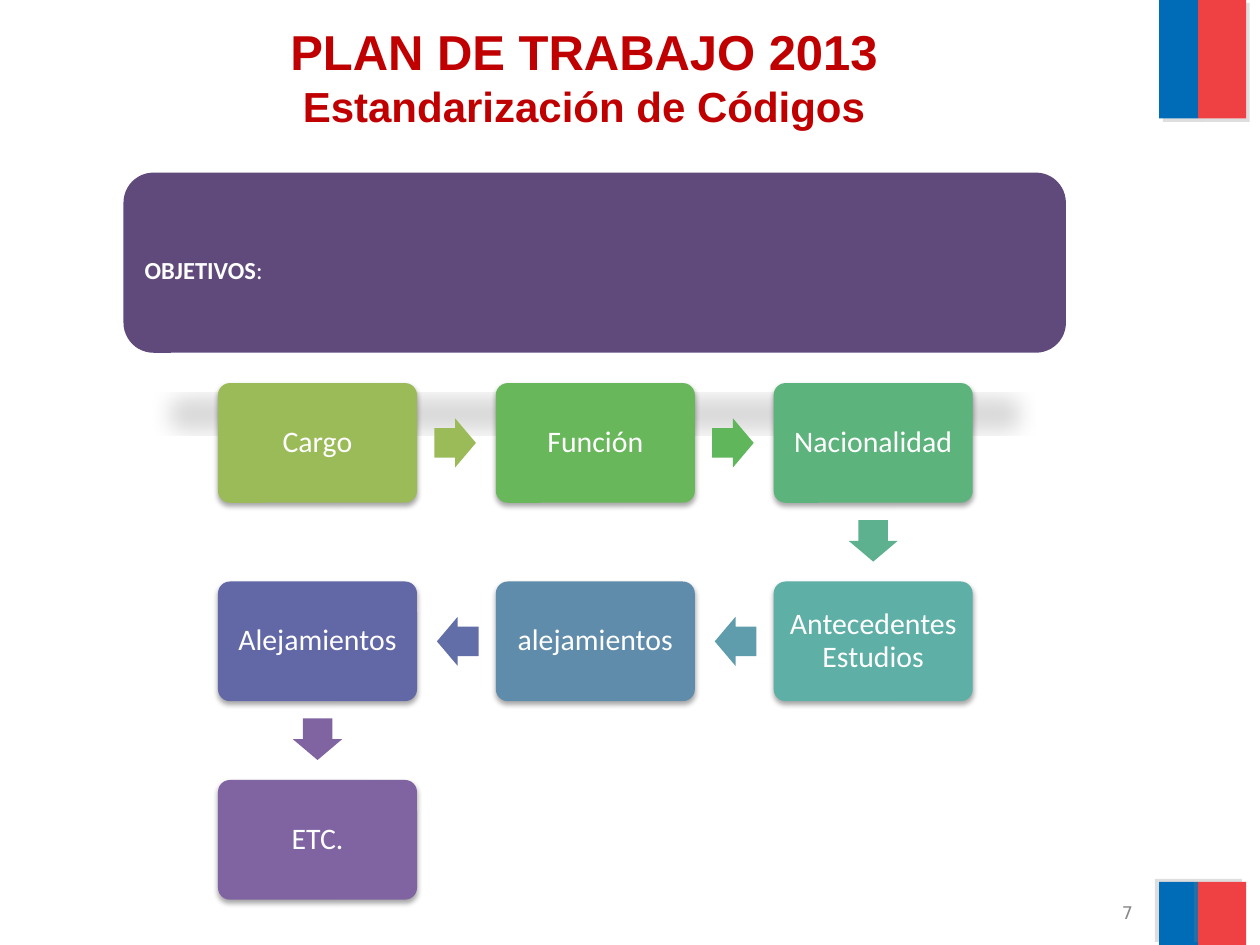
"""Build the slide on the 2013 work plan for standard codes."""
from dataclasses import dataclass

from lxml.etree import SubElement
from pptx import Presentation
from pptx.dml.color import RGBColor
from pptx.enum.shapes import MSO_SHAPE
from pptx.enum.text import MSO_ANCHOR, MSO_AUTO_SIZE, PP_ALIGN
from pptx.oxml.ns import qn
from pptx.util import Inches, Pt

COLS, ROWS = 100, 75


@dataclass(frozen=True)
class Theme:
    head: str = "Arial"
    body: str = "Calibri"
    digit: str = "DejaVu Sans"
    title: int = 28
    sub: int = 24
    step: int = 17
    label: int = 14
    small: int = 10
    crimson: str = "C00000"
    white: str = "FFFFFF"
    gray: str = "898989"
    blue: str = "006CB7"
    red: str = "EF4144"
    plum: str = "604A7B"
    shade: str = "808080"
    black: str = "000000"


def write(para, text, font, size, color, bold=False, align=None, space=None):
    run = para.add_run()
    run.text = text
    run.font.name, run.font.size, run.font.bold = font, Pt(size), bold
    run.font.color.rgb = RGBColor.from_string(color)
    if align is not None:
        para.alignment = align
    if space is not None:
        para.line_spacing = space


class Deck:
    def __init__(self, theme):
        self.theme = theme
        self.show = Presentation()
        self.show.slide_width, self.show.slide_height = Inches(10), Inches(7.5)
        self.slide = self.show.slides.add_slide(self.show.slide_layouts[5])

    def area(self, left, top, wide, high):
        across, down = self.show.slide_width / COLS, self.show.slide_height / ROWS
        return [round(n) for n in (left * across, top * down, wide * across, high * down)]

    def title(self, area, main, sub):
        look, shape = self.theme, self.slide.shapes.title
        shape.left, shape.top, shape.width, shape.height = self.area(*area)
        frame = shape.text_frame
        frame.auto_size, frame.vertical_anchor = MSO_AUTO_SIZE.NONE, MSO_ANCHOR.TOP
        para = frame.paragraphs[0]
        style = dict(font=look.head, color=look.crimson, bold=True, align=PP_ALIGN.CENTER)
        write(para, main, size=look.title, **style)
        para.add_line_break()
        write(para, sub, size=look.sub, **style)

    def shape(self, kind, area, fill, bends=(), turn=0):
        shape = self.slide.shapes.add_shape(kind, *self.area(*area))
        shape.fill.solid()
        shape.fill.fore_color.rgb = RGBColor.from_string(fill)
        shape.line.fill.background()
        shape.shadow.inherit = False
        shape.rotation = turn
        for spot, bend in enumerate(bends):
            shape.adjustments[spot] = bend
        return shape

    def shadow(self, shape, color, alpha, blur, dist, angle, **scale):
        effect = shape.element.spPr.find(qn("a:effectLst"))
        cast = SubElement(effect, qn("a:outerShdw"), blurRad=str(Pt(blur)), dist=str(Pt(dist)),
                          dir=str(angle * 60000), rotWithShape="0", **scale)
        tint = SubElement(cast, qn("a:srgbClr"), val=color)
        SubElement(tint, qn("a:alpha"), val=str(alpha * 1000))

    def flag(self, top, high, angle):
        look = self.theme
        for left, wide, fill in ((92, 3.1, look.blue), (95.1, 3.8, look.red)):
            band = self.shape(MSO_SHAPE.RECTANGLE, (left, top, wide, high), fill)
            self.shadow(band, look.shade, 25, 0, 3, angle)

    def number(self, area, text):
        look = self.theme
        frame = self.slide.shapes.add_textbox(*self.area(*area)).text_frame
        frame.word_wrap, frame.vertical_anchor = True, MSO_ANCHOR.MIDDLE
        write(frame.paragraphs[0], text, look.digit, look.small, look.gray, align=PP_ALIGN.RIGHT)

    def panel(self, area, label, tail):
        look = self.theme
        panel = self.shape(MSO_SHAPE.ROUNDED_RECTANGLE, area, look.plum)
        self.shadow(panel, look.black, 15, 12, 25, 90, sx="90000", sy="-19000")
        panel.text_frame.vertical_anchor = MSO_ANCHOR.MIDDLE
        para = panel.text_frame.paragraphs[0]
        style = dict(font=look.body, size=look.label, color=look.white)
        write(para, label, bold=True, align=PP_ALIGN.JUSTIFY, space=1.5, **style)
        write(para, tail, **style)

    def step(self, mid, size, text, fill):
        look, (x, y), (wide, high) = self.theme, mid, size
        box = self.shape(MSO_SHAPE.ROUNDED_RECTANGLE,
                         (x - wide / 2, y - high / 2, wide, high), fill, (0.1,))
        self.shadow(box, look.black, 35, 3.1, 1.8, 90)
        frame = box.text_frame
        frame.word_wrap, frame.vertical_anchor = True, MSO_ANCHOR.MIDDLE
        frame.margin_left = frame.margin_right = Inches(0.1)
        write(frame.paragraphs[0], text, look.body, look.step, look.white,
              align=PP_ALIGN.CENTER, space=0.9)

    def arrow(self, start, end, fill):
        wide, high, lean = 3.3, 3.9, 0.1
        (x, y), (to_x, to_y) = start, end
        turn = 90 if to_y > y else 0 if to_x > x else 180
        shift_x, shift_y = {0: (lean, 0), 90: (0, lean), 180: (-lean, 0)}[turn]
        left = (x + to_x) / 2 - shift_x - wide / 2
        top = (y + to_y) / 2 - shift_y - high / 2
        self.shape(MSO_SHAPE.RIGHT_ARROW, (left, top, wide, high), fill, (0.6, 0.5), turn)

    def snake(self, first, pitch, size, across, steps):
        mids = []
        for spot in range(len(steps)):
            row, col = divmod(spot, across)
            col = across - 1 - col if row % 2 else col
            mids.append((first[0] + col * pitch[0], first[1] + row * pitch[1]))
        for mid, after, (text, fill, point) in zip(mids, mids[1:] + [None], steps):
            self.step(mid, size, text, fill)
            if after:
                self.arrow(mid, after, point)


def main():
    deck = Deck(Theme())
    deck.flag(-0.05, 9.45, 45)
    deck.flag(70, 5, 215)
    deck.number((67.6, 71.4, 23.3, 2.1), "7")
    deck.title((1.7, 1.2, 89.3, 12.5), "PLAN DE TRABAJO 2013", "Estandarización de Códigos")
    deck.panel((9.8, 13.7, 74.8, 14.3), "OBJETIVOS", ":")
    deck.snake((25.2, 35.15), (22.05, 15.75), (15.8, 9.5), 3, [
        ("Cargo", "9BBB59", "9BBB59"),
        ("Función", "69B75B", "5FB65B"),
        ("Nacionalidad", "5CB37C", "5DB18E"),
        ("Antecedentes Estudios", "5EAFA6", "5F9DAC"),
        ("alejamientos", "608CAB", "626EA7"),
        ("Alejamientos", "6267A6", "8064A2"),
        ("ETC.", "8064A2", None),
    ])
    deck.show.save("out.pptx")


if __name__ == "__main__":
    main()
